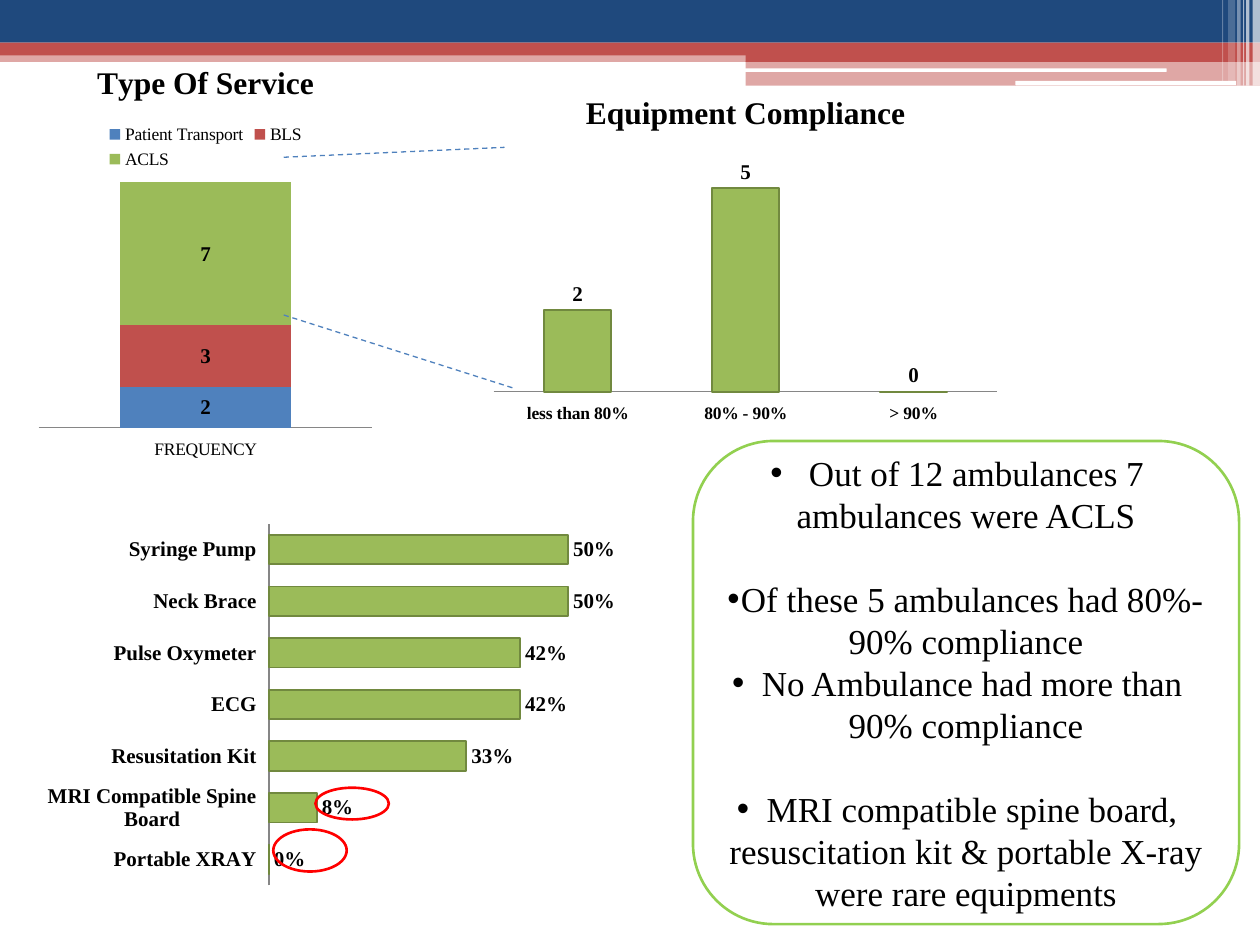
from dataclasses import dataclass

from lxml.etree import SubElement
from pptx import Presentation
from pptx.chart.data import CategoryChartData as ChartData
from pptx.dml.color import RGBColor as Rgb
from pptx.enum.chart import XL_CHART_TYPE as Kind
from pptx.enum.chart import XL_LABEL_POSITION as Spot
from pptx.enum.chart import XL_LEGEND_POSITION as Side
from pptx.enum.chart import XL_TICK_LABEL_POSITION as Tag
from pptx.enum.chart import XL_TICK_MARK as Tick
from pptx.enum.dml import MSO_LINE as Dash
from pptx.enum.shapes import MSO_CONNECTOR as Link
from pptx.enum.shapes import MSO_SHAPE as Form
from pptx.enum.text import MSO_ANCHOR as Anchor
from pptx.enum.text import PP_ALIGN as Align
from pptx.oxml.ns import qn
from pptx.util import Cm, Pt


@dataclass(frozen=True)
class Theme:
    font: str = "Times New Roman"
    navy: str = "1F497D"
    blue: str = "4F81BD"
    red: str = "C0504D"
    green: str = "9BBB59"
    moss: str = "71893F"
    lime: str = "92D050"
    alert: str = "FF0000"
    gray: str = "868686"
    white: str = "FFFFFF"
    black: str = "000000"
    small: int = 10
    label: int = 12
    title: int = 18
    body: int = 20
    lead: int = 24


T = Theme()


def color(hue):
    return Rgb.from_string(hue)


def style(font, size, bold=False):
    font.name, font.size, font.bold = T.font, Pt(size), bold
    font.color.rgb = color(T.black)


def shape(slide, form, box, fill=None, line=None, alpha=100):
    item = slide.shapes.add_shape(form, *map(Cm, box))
    item.shadow.inherit = False
    if fill:
        item.fill.solid()
        item.fill.fore_color.rgb = color(fill)
        if alpha < 100:
            hue = item.fill._xPr.find(".//" + qn("a:srgbClr"))
            SubElement(hue, qn("a:alpha"), val=str(alpha * 1000))
    else:
        item.fill.background()
    if line:
        item.line.color.rgb = color(line)
        item.line.width = Pt(1.5)
    else:
        item.line.fill.background()
    return item


def header(slide, box):
    left, top, wide, _ = box
    right = left + wide
    mid = 15.03
    bars = [
        (0, 1.02, wide, 0.23, T.red, 50),
        (0, 0, wide, 0.86, T.navy, 100),
        (0, 0.86, wide, 0.26, T.red, 100),
        (mid, 0.99, wide - mid, 0.26, T.red, 100),
        (mid, 1.23, wide - mid, 0.5, T.red, 50),
    ]
    for x, y, w, h, hue, alpha in bars:
        shape(slide, Form.RECTANGLE, (left + x, top + y, w, h), hue, alpha=alpha)
    for x, y, w, h in [(15.01, 1.38, 8.51, 0.07), (20.47, 1.63, 4.45, 0.09)]:
        shape(slide, Form.ROUNDED_RECTANGLE, (left + x, top + y, w, h), T.white)
    # Stripes: distance from the right edge, width, height, opacity
    stripes = [
        (0.15, 0.15, 1.73, 65),
        (0.28, 0.07, 1.73, 65),
        (0.34, 0.02, 1.73, 60),
        (0.46, 0.07, 1.73, 40),
        (0.64, 0.14, 1.63, 20),
        (0.76, 0.02, 1.63, 30),
    ]
    for back, w, h, alpha in stripes:
        shape(slide, Form.RECTANGLE, (right - back, top, w, h), T.white, alpha=alpha)


def chart(slide, box, kind, cats, series, title=None, fmt="General", size=T.small):
    """Add a chart with a bare category axis, value labels and no value axis."""
    data = ChartData(number_format=fmt)
    data.categories = cats
    for name, vals in series:
        data.add_series(name, vals)
    item = slide.shapes.add_chart(kind, *map(Cm, box), data).chart
    style(item.font, size)
    item.has_legend = False
    item.has_title = bool(title)
    if title:
        par = item.chart_title.text_frame.paragraphs[0]
        par.text = title
        style(par.font, T.title, True)
    axis = item.value_axis
    axis.visible = axis.has_major_gridlines = False
    axis.minimum_scale = 0
    axis = item.category_axis
    axis.major_tick_mark = axis.minor_tick_mark = Tick.NONE
    axis.tick_label_position = Tag.LOW
    axis.format.line.color.rgb = color(T.gray)
    plot = item.plots[0]
    plot.vary_by_categories = False
    plot.has_data_labels = True
    tags = plot.data_labels
    tags.show_value = True
    tags.number_format, tags.number_format_is_linked = fmt, False
    style(tags.font, T.label, True)
    return item


def paint(series, hue, edge=None):
    series.invert_if_negative = False
    series.format.fill.solid()
    series.format.fill.fore_color.rgb = color(hue)
    if edge:
        series.format.line.color.rgb = color(edge)
        series.format.line.width = Pt(1)


def service(slide, box):
    rows = [("Patient Transport", [2]), ("BLS", [3]), ("ACLS", [7])]
    item = chart(slide, box, Kind.COLUMN_STACKED_100, ["FREQUENCY"], rows, "Type Of Service")
    item.has_legend = True
    item.legend.position = Side.TOP
    item.legend.include_in_layout = False
    style(item.legend.font, T.small)
    plot = item.plots[0]
    plot.gap_width, plot.overlap = 95, 100
    for part, hue in zip(plot.series, (T.blue, T.red, T.green)):
        paint(part, hue)


def comply(slide, box):
    cats = ["less than 80%", "80% - 90%", "> 90%"]
    rows = [("Series 1", [2, 5, 0])]
    item = chart(slide, box, Kind.COLUMN_CLUSTERED, cats, rows, "Equipment Compliance")
    style(item.category_axis.tick_labels.font, T.small, True)
    plot = item.plots[0]
    plot.gap_width, plot.overlap = 150, -25
    plot.data_labels.position = Spot.OUTSIDE_END
    paint(plot.series[0], T.green, T.moss)


def zoom(slide, box):
    """Dashed lines that open from the stacked column to the next chart."""
    left, top, wide, high = box
    ends = [((0, 0.2), (wide - 0.2, 0)), ((0, 3.38), (wide, high))]
    for (x1, y1), (x2, y2) in ends:
        spots = (left + x1, top + y1, left + x2, top + y2)
        line = slide.shapes.add_connector(Link.STRAIGHT, *map(Cm, spots))
        line.line.color.rgb = color(T.blue)
        line.line.width = Pt(0.75)
        line.line.dash_style = Dash.DASH
        SubElement(line._element.spPr, qn("a:effectLst"))


def gear(slide, box):
    rates = {
        "Portable XRAY": 0,
        "MRI Compatible Spine Board": 0.08,
        "Resusitation Kit": 0.33,
        "ECG": 0.42,
        "Pulse Oxymeter": 0.42,
        "Neck Brace": 0.5,
        "Syringe Pump": 0.5,
    }
    rows = [("Series 1", list(rates.values()))]
    item = chart(slide, box, Kind.BAR_CLUSTERED, list(rates), rows, fmt="0%", size=T.title)
    item.value_axis.maximum_scale = 0.6
    style(item.category_axis.tick_labels.font, T.label, True)
    plot = item.plots[0]
    plot.gap_width = 75
    plot.data_labels.position = Spot.OUTSIDE_END
    paint(plot.series[0], T.green, T.moss)
    area = item._chartSpace.chart.plotArea
    for old in area.findall(qn("c:layout")):
        area.remove(old)
    frame = SubElement(area, qn("c:layout"))
    area.insert(0, frame)
    frame = SubElement(frame, qn("c:manualLayout"))
    rules = dict(layoutTarget="inner", xMode="edge", yMode="edge",
                 x=0.36, y=0.07, w=0.57, h=0.84)
    for key, val in rules.items():
        SubElement(frame, qn("c:" + key), val=str(val))
    left, top = box[:2]
    for x, y, h in [(5.51, 5.93, 0.64), (4.66, 6.77, 0.85)]:
        shape(slide, Form.OVAL, (left + x, top + y, 1.48, h), line=T.alert)


def notes(slide, box):
    frame = shape(slide, Form.ROUNDED_RECTANGLE, box, T.white, T.lime).text_frame
    frame.word_wrap = True
    frame.vertical_anchor = Anchor.MIDDLE
    frame.margin_left = frame.margin_right = Cm(0.22)
    points = [
        (" Out of 12 ambulances 7 ambulances were ACLS", 0),
        ("Of these 5 ambulances had 80%-90% compliance", T.lead),
        ("No Ambulance had more than 90% compliance", 0),
        ("MRI compatible spine board, resuscitation kit & portable X-ray "
         "were rare equipments", T.lead),
    ]
    for i, (text, gap) in enumerate(points):
        par = frame.add_paragraph() if i else frame.paragraphs[0]
        par.text = text
        par.alignment = Align.CENTER
        par.line_spacing, par.space_before = Pt(T.lead), Pt(gap)
        style(par.font, T.body)
        props = par._p.get_or_add_pPr()
        SubElement(props, qn("a:buFont"), typeface="Arial")
        SubElement(props, qn("a:buChar"), char="•")
        # Bullet marks must precede the default run properties
        props.append(props.find(qn("a:defRPr")))


def main():
    deck = Presentation()
    deck.slide_width, deck.slide_height = Cm(25.4), Cm(19.05)
    slide = deck.slides.add_slide(deck.slide_layouts[6])
    header(slide, (0, 0, 25.4, 1.73))
    notes(slide, (13.97, 8.89, 11.01, 9.74))
    service(slide, (0.64, 0.85, 7.01, 8.59))
    comply(slide, (9.74, 1.48, 10.58, 7.21))
    zoom(slide, (5.72, 2.97, 4.65, 4.86))
    gear(slide, (0.85, 9.95, 12.7, 8.68))
    deck.save("out.pptx")


if __name__ == "__main__":
    main()
